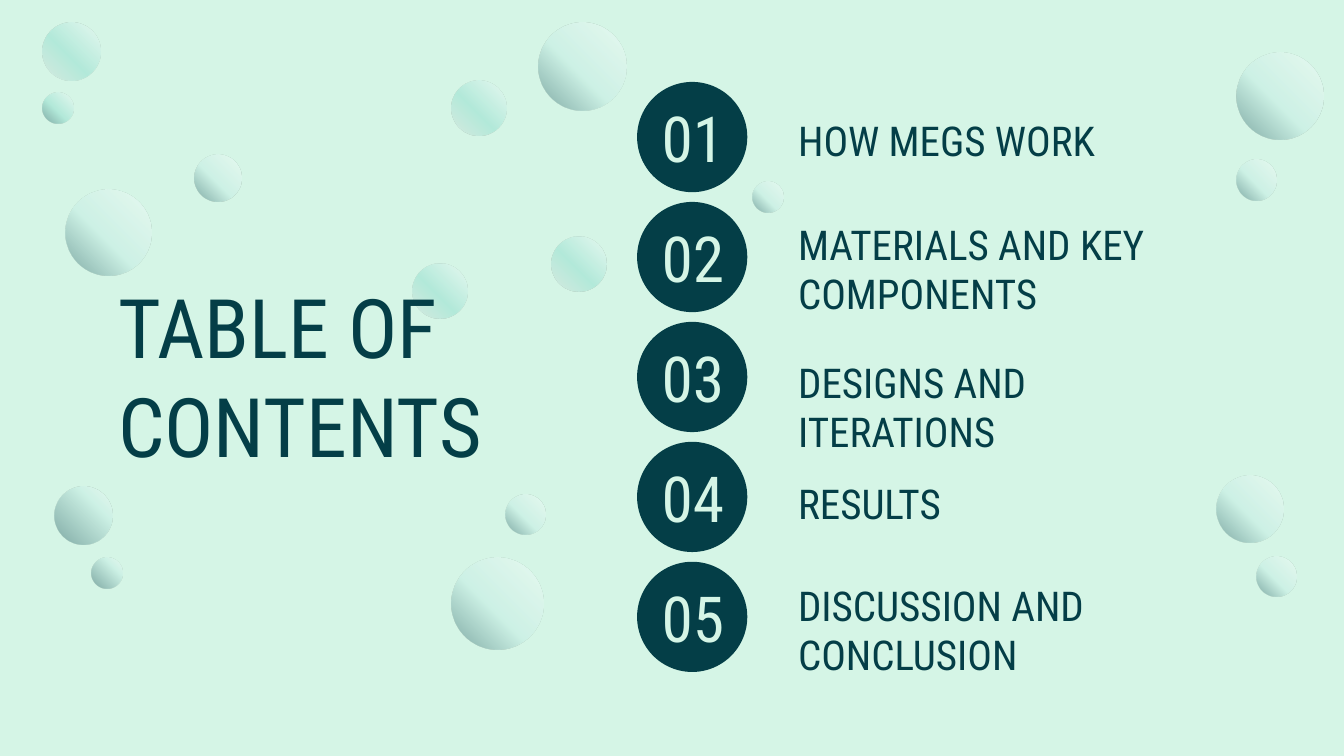
from pptx import Presentation
from pptx.dml.color import RGBColor
from pptx.enum.shapes import MSO_SHAPE
from pptx.enum.text import MSO_ANCHOR, PP_ALIGN
from pptx.oxml import parse_xml
from pptx.oxml.ns import nsdecls, qn
from pptx.util import Inches, Pt

DARK = "043E47"
MINT = "D5F5E6"

# Gradient stops: (position in percent, colour)
PALE = [(0, "FFFFFF"), (56, "C1ECE4"), (100, DARK)]
DEEP = [(0, "FFFFFF"), (31, "C1ECE4"), (100, DARK)]
AQUA = [(0, "FFFFFF"), (56, "82D9C8"), (100, "D9D9D9")]
TEAL = [(0, "FFFFFF"), (56, "82D9C8"), (100, DARK)]

# Bubbles: left, top, diameter
BUBBLES = [
    (PALE, [(9.35, 4.14, 0.3), (9.05, 3.54, 0.5), (9.2, 0.39, 0.65), (9.2, 1.19, 0.3),
            (4.01, 0.17, 0.65), (3.76, 3.68, 0.3), (5.6, 1.35, 0.23), (3.36, 4.15, 0.68),
            (1.45, 1.15, 0.35), (0.49, 1.41, 0.64)]),
    (DEEP, [(0.41, 3.62, 0.43), (0.68, 4.15, 0.23)]),
    (AQUA, [(0.32, 0.17, 0.43), (3.07, 1.96, 0.41), (3.36, 0.6, 0.41), (4.1, 1.76, 0.41)]),
    (TEAL, [(0.32, 0.69, 0.23)]),
]

# Contents: entry, top, width, height
ENTRIES = [
    ("HOW MEGS WORK", 0.76, 3.38, 0.49),
    ("MATERIALS AND KEY COMPONENTS", 1.53, 4.03, 0.46),
    ("DESIGNS AND ITERATIONS", 2.56, 3.38, 0.49),
    ("RESULTS", 3.46, 3.38, 0.49),
    ("DISCUSSION AND CONCLUSION", 4.22, 3.53, 0.49),
]
BADGE_LEFT, FIRST_BADGE, LAST_BADGE = 4.74, 0.61, 4.18
BADGE_PITCH = (LAST_BADGE - FIRST_BADGE) / (len(ENTRIES) - 1)


def colour(value):
    return RGBColor.from_string(value)


class SlideBuilder:
    font_name = "Roboto Condensed"
    bubble_opacity = 41

    def __init__(self, slide):
        self.slide = slide

    def background(self, fill_colour):
        fill = self.slide.background.fill
        fill.solid()
        fill.fore_color.rgb = colour(fill_colour)

    def circle(self, left, top, diameter):
        shape = self.slide.shapes.add_shape(
            MSO_SHAPE.OVAL, Inches(left), Inches(top), Inches(diameter), Inches(diameter))
        shape.shadow.inherit = False
        shape.line.fill.background()
        return shape

    def badge(self, left, top, diameter, fill_colour):
        shape = self.circle(left, top, diameter)
        shape.fill.solid()
        shape.fill.fore_color.rgb = colour(fill_colour)

    def bubble(self, left, top, diameter, stops):
        """Draw a translucent circle shaded outwards from its top right corner."""
        shape = self.circle(left, top, diameter)
        shape.fill.background()
        stop_xml = "".join(
            f'<a:gs pos="{position * 1000}"><a:srgbClr val="{value}">'
            f'<a:alpha val="{self.bubble_opacity * 1000}"/></a:srgbClr></a:gs>'
            for position, value in stops)
        gradient = parse_xml(
            f'<a:gradFill {nsdecls("a")}><a:gsLst>{stop_xml}</a:gsLst>'
            '<a:path path="circle"><a:fillToRect l="100000" b="100000"/></a:path>'
            '</a:gradFill>')
        properties = shape.element.spPr
        properties.replace(properties.find(qn("a:noFill")), gradient)

    def text(self, content, left, top, width, height, size, text_colour=DARK,
             side_inset=0.1, anchor=MSO_ANCHOR.TOP, align=PP_ALIGN.LEFT):
        box = self.slide.shapes.add_textbox(
            Inches(left), Inches(top), Inches(width), Inches(height))
        frame = box.text_frame
        frame.word_wrap = True
        frame.vertical_anchor = anchor
        frame.margin_left = frame.margin_right = Inches(side_inset)
        frame.margin_top = frame.margin_bottom = Inches(0.1)
        paragraph = frame.paragraphs[0]
        paragraph.text = content
        paragraph.alignment = align
        paragraph.font.name = self.font_name
        paragraph.font.size = Pt(size)
        paragraph.font.color.rgb = colour(text_colour)


def main():
    presentation = Presentation()
    presentation.slide_width = Inches(10)
    presentation.slide_height = Inches(10 * 9 / 16)
    builder = SlideBuilder(presentation.slides.add_slide(presentation.slide_layouts[6]))
    builder.background(MINT)

    for stops, places in BUBBLES:
        for left, top, diameter in places:
            builder.bubble(left, top, diameter, stops)

    builder.text("TABLE OF CONTENTS", 0.78, 1.96, 3.35, 1.7, 44)

    for index, (entry, top, width, height) in enumerate(ENTRIES):
        badge_top = FIRST_BADGE + index * BADGE_PITCH
        builder.badge(BADGE_LEFT, badge_top, 0.82, DARK)
        builder.text(f"{index + 1:02}", BADGE_LEFT + 0.03, badge_top + 0.05, 0.77, 0.72, 34,
                     MINT, 0, MSO_ANCHOR.MIDDLE, PP_ALIGN.CENTER)
        builder.text(entry, 5.84, top, width, height, 22)

    presentation.save("out.pptx")


if __name__ == "__main__":
    main()
